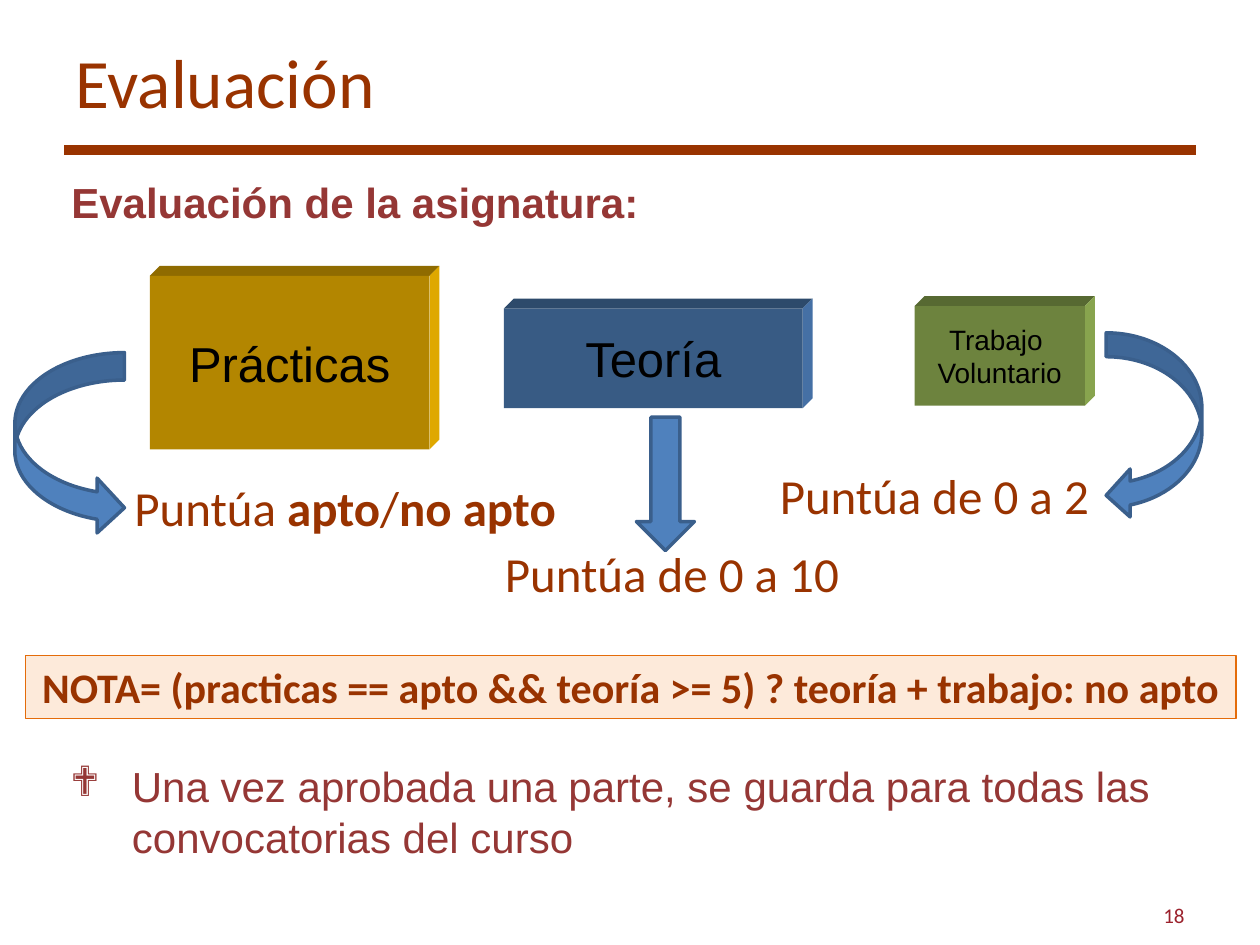
from dataclasses import dataclass

from lxml import etree
from pptx import Presentation
from pptx.dml.color import RGBColor
from pptx.enum.shapes import MSO_CONNECTOR as Line, MSO_SHAPE as Preset
from pptx.enum.text import MSO_ANCHOR as Anchor, PP_ALIGN as Align
from pptx.oxml.ns import qn
from pptx.util import Cm, Pt


@dataclass(frozen=True)
class Theme:
    rust: str = "993300"
    wine: str = "953735"
    page: str = "9B212C"
    black: str = "000000"
    arrow: str = "4F81BD"
    arrow_edge: str = "3A5F8C"
    formula: str = "FDEADA"
    formula_edge: str = "E46C0A"
    gold: tuple = ("B38600", "8F6B00", "DFA800")
    blue: tuple = ("385B84", "2D4A6B", "4570A5")
    green: tuple = ("6D833E", "576932", "88A44E")
    heading: str = "Calibri"
    body: str = "Arial"
    title_size: float = 39.6
    label_size: int = 28
    text_size: int = 24
    small_size: int = 16
    page_size: int = 12


THEME = Theme()
DEPTH = 0.2


def rgb(value):
    return RGBColor.from_string(value)


def paint(shape, fill, edge=None, weight=0.75):
    shape.shadow.inherit = False
    shape.fill.solid()
    shape.fill.fore_color.rgb = rgb(fill)
    if edge:
        shape.line.color.rgb = rgb(edge)
        shape.line.width = Pt(weight)
    else:
        shape.line.fill.background()


def add_run(paragraph, text, size, color, font, bold=False):
    run = paragraph.add_run()
    run.text = text
    run.font.size = Pt(size)
    run.font.color.rgb = rgb(color)
    run.font.name = font
    run.font.bold = bold


def add_text(slide, place, runs, size, color, font, wrap=True,
             anchor=Anchor.TOP, align=Align.LEFT, inset=0.13):
    frame = slide.shapes.add_textbox(*map(Cm, place)).text_frame
    frame.word_wrap = wrap
    frame.vertical_anchor = anchor
    frame.margin_top = Cm(inset)
    paragraph = frame.paragraphs[0]
    paragraph.alignment = align
    for text, bold in runs:
        add_run(paragraph, text, size, color, font, bold)
    return paragraph


def add_bullet(paragraph, mark, indent):
    properties = paragraph._p.get_or_add_pPr()
    properties.set("marL", str(Cm(indent)))
    properties.set("indent", str(-Cm(indent)))
    etree.SubElement(properties, qn("a:buFont")).set("typeface", "Wingdings")
    etree.SubElement(properties, qn("a:buChar")).set("char", mark)


def add_face(slide, corners, color):
    start, *rest = [(Cm(x), Cm(y)) for x, y in corners]
    builder = slide.shapes.build_freeform(*start)
    builder.add_line_segments(rest, close=True)
    paint(builder.convert_to_shape(), color)


def add_block(slide, place, lines, size, colors):
    left, top, width, height = place
    right, bottom = left + width, top + height
    front, lid, side = colors
    back_corner = (right + DEPTH, top - DEPTH)
    add_face(slide, [(left, top), (left + DEPTH, top - DEPTH),
                     back_corner, (right, top)], lid)
    add_face(slide, [(right, top), back_corner,
                     (right + DEPTH, bottom - DEPTH), (right, bottom)], side)
    block = slide.shapes.add_shape(Preset.RECTANGLE, *map(Cm, place))
    paint(block, front)
    block.text_frame.word_wrap = False
    block.text_frame.vertical_anchor = Anchor.MIDDLE
    paragraph = block.text_frame.paragraphs[0]
    paragraph.alignment = Align.CENTER
    for number, line in enumerate(lines):
        if number:
            paragraph.add_line_break()
        add_run(paragraph, line, size, THEME.black, THEME.body)


def add_arrow(slide, preset, place):
    arrow = slide.shapes.add_shape(preset, *map(Cm, place))
    paint(arrow, THEME.arrow, THEME.arrow_edge, 2)


def add_score(slide, place, runs):
    add_text(slide, place, runs, THEME.label_size, THEME.rust, THEME.heading, wrap=False)


def add_formula(slide, place, text):
    formula = slide.shapes.add_shape(Preset.RECTANGLE, *map(Cm, place))
    paint(formula, THEME.formula, THEME.formula_edge)
    formula.text_frame.word_wrap = True
    formula.text_frame.vertical_anchor = Anchor.TOP
    paragraph = formula.text_frame.paragraphs[0]
    paragraph.alignment = Align.CENTER
    add_run(paragraph, text, THEME.text_size, THEME.rust, THEME.heading, True)


def add_rule(slide, start, end, y):
    rule = slide.shapes.add_connector(Line.STRAIGHT, Cm(start), Cm(y), Cm(end), Cm(y))
    rule.line.color.rgb = rgb(THEME.rust)
    rule.line.width = Pt(6)
    etree.SubElement(rule._element.spPr, qn("a:effectLst"))


def main():
    deck = Presentation()
    deck.slide_width, deck.slide_height = Cm(25.4), Cm(19.05)
    slide = deck.slides.add_slide(deck.slide_layouts[6])

    add_rule(slide, 1.3, 24.1, 3.02)
    add_text(slide, (1.27, 0.76, 22.86, 1.75), [("Evaluación", False)],
             THEME.title_size, THEME.rust, THEME.heading, anchor=Anchor.MIDDLE)
    add_text(slide, (18.21, 17.93, 5.92, 1.02), [("18", False)], THEME.page_size,
             THEME.page, THEME.heading, anchor=Anchor.MIDDLE, align=Align.RIGHT)
    add_text(slide, (1.19, 3.33, 22.94, 3.12), [("Evaluación de la asignatura:", True)],
             THEME.text_size, THEME.wine, THEME.body, inset=0.23)

    add_block(slide, (10.16, 6.22, 6.02, 2.01), ["Teoría"], THEME.label_size, THEME.blue)
    add_block(slide, (3.02, 5.56, 5.64, 3.5), ["Prácticas"], THEME.label_size, THEME.gold)
    add_block(slide, (18.44, 6.17, 3.43, 2.01), ["Trabajo ", "Voluntario"],
              THEME.small_size, THEME.green)

    add_arrow(slide, Preset.CURVED_RIGHT_ARROW, (0.3, 7.11, 2.21, 3.68))
    add_arrow(slide, Preset.CURVED_LEFT_ARROW, (22.3, 6.71, 1.93, 3.76))
    add_arrow(slide, Preset.DOWN_ARROW, (12.83, 8.41, 1.17, 2.69))

    add_score(slide, (2.46, 9.5, 9.12, 1.45),
              [("Puntúa ", False), ("apto", True), ("/", False), ("no apto", True)])
    add_score(slide, (9.93, 10.82, 7.34, 1.45), [("Puntúa de 0 a 10", False)])
    add_score(slide, (15.47, 9.25, 6.83, 1.45), [("Puntúa de 0 a 2", False)])

    add_formula(slide, (0.51, 13.21, 24.41, 1.27),
                "NOTA= (practicas == apto && teoría >= 5) ? teoría + trabajo: no apto")
    policy = add_text(
        slide, (1.17, 15.11, 22.94, 3.12),
        [("Una vez aprobada una parte, se guarda para todas las convocatorias del curso", False)],
        THEME.text_size, THEME.wine, THEME.body, inset=0.23)
    add_bullet(policy, "❖", 1.24)

    deck.save("out.pptx")


if __name__ == "__main__":
    main()
